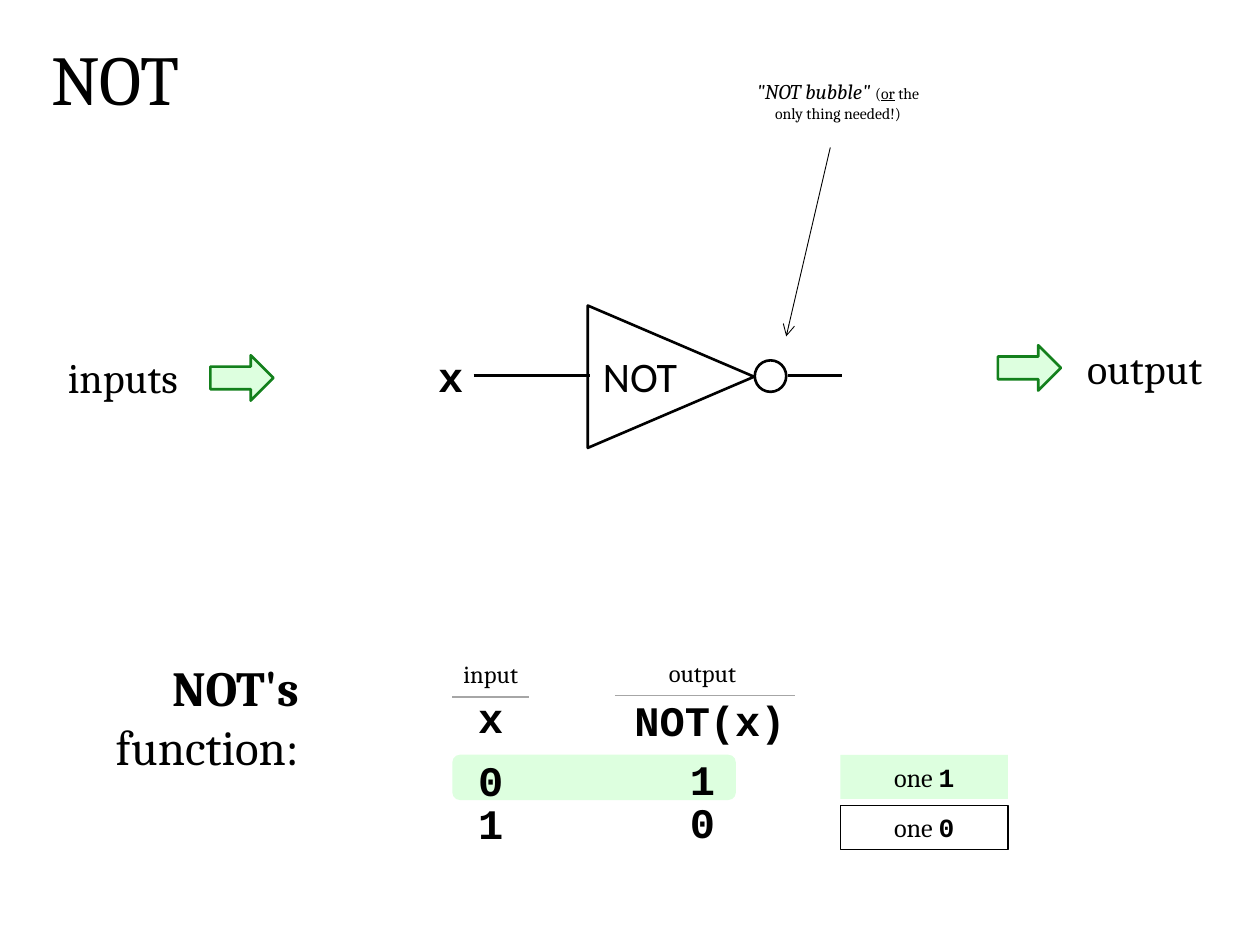
from lxml.etree import SubElement
from pptx import Presentation
from pptx.dml.color import RGBColor
from pptx.enum.shapes import MSO_CONNECTOR, MSO_SHAPE
from pptx.enum.text import MSO_ANCHOR, PP_ALIGN
from pptx.oxml.ns import qn
from pptx.util import Inches, Pt

COLORS = {"ink": "000000", "mint": "DDFFDF", "green": "13801C", "gray": "A6A6A6"}
SERIF, SANS, MONO = "Cambria", "Calibri", "Courier New"
LEFT, MID, RIGHT = PP_ALIGN.LEFT, PP_ALIGN.CENTER, PP_ALIGN.RIGHT


def color(name):
    return RGBColor.from_string(COLORS[name])


def write(frame, runs, align):
    par = frame.paragraphs[0]
    par.alignment = align
    for text, size, face, *marks in runs:
        run = par.add_run()
        run.text = text
        font = run.font
        font.size, font.name = Pt(size), face
        font.color.rgb = color("ink")
        font.bold = "b" in marks
        font.italic = "i" in marks
        font.underline = "u" in marks


def add_text(slide, box, runs, align=MID, wrap=True):
    frame = slide.shapes.add_textbox(*map(Inches, box)).text_frame
    frame.word_wrap = wrap
    write(frame, runs, align)


def add_shape(slide, kind, box, fill=None, line=None, width=1.5):
    shape = slide.shapes.add_shape(kind, *map(Inches, box))
    shape.shadow.inherit = False
    if fill:
        shape.fill.solid()
        shape.fill.fore_color.rgb = color(fill)
    else:
        shape.fill.background()
    if line:
        shape.line.color.rgb = color(line)
        shape.line.width = Pt(width)
    else:
        shape.line.fill.background()
    return shape


def add_line(slide, start, end, tint="ink", width=1.5, arrow=False):
    line = slide.shapes.add_connector(
        MSO_CONNECTOR.STRAIGHT, *map(Inches, (*start, *end)))
    line.line.color.rgb = color(tint)
    line.line.width = Pt(width)
    if arrow:
        SubElement(line.line._get_or_add_ln(), qn("a:tailEnd"), type="arrow")
    SubElement(line._element.spPr, qn("a:effectLst"))


def add_gate(slide):
    for x, y in ((1.67, 2.82), (7.92, 2.74)):
        add_shape(slide, MSO_SHAPE.RIGHT_ARROW, (x, y, 0.5, 0.36), "mint", "green")
    for left, right in ((6.25, 6.68), (3.76, 4.68)):
        add_line(slide, (left, 2.98), (right, 2.98))
    add_text(slide, (4.68, 2.73, 0.8, 0.5), [("NOT", 24, SANS)], wrap=False)
    add_text(slide, (3.38, 2.73, 0.63, 0.5), [("x", 24, MONO, "b")], LEFT)
    gate = add_shape(slide, MSO_SHAPE.ISOSCELES_TRIANGLE,
                     (4.76, 2.33, 1.13, 1.32), line="ink")
    gate.rotation = 90
    add_shape(slide, MSO_SHAPE.OVAL, (5.99, 2.86, 0.25, 0.25), line="ink")
    add_line(slide, (6.59, 1.17), (6.24, 2.67), width=0.5, arrow=True)


def add_truth(slide):
    add_shape(slide, MSO_SHAPE.ROUNDED_RECTANGLE, (3.59, 5.99, 2.25, 0.36), "mint")
    cells = (
        ("x", 3.6, 5.44, 0.59), ("0", 3.6, 5.94, 0.59), ("1", 3.6, 6.28, 0.59),
        ("NOT(x)", 4.72, 5.46, 1.83), ("1", 5.26, 5.93, 0.63), ("0", 5.26, 6.27, 0.63),
    )
    for text, x, y, width in cells:
        add_text(slide, (x, y, width, 0.5), [(text, 24, MONO, "b")])
    heads = (("input", 3.57, 5.18, 0.65, 3.59, 4.2),
             ("output", 5.18, 5.17, 0.79, 4.88, 6.31))
    for text, x, y, width, left, right in heads:
        add_text(slide, (x, y, width, 0.33), [(text, 14, SERIF)], wrap=False)
        add_line(slide, (left, y + 0.35), (right, y + 0.35), "gray", 1)


def add_count(slide, digit, top, fill=None, line=None):
    shape = add_shape(slide, MSO_SHAPE.RECTANGLE, (6.67, top, 1.33, 0.35), fill, line, 0.75)
    frame = shape.text_frame
    frame.word_wrap = True
    frame.vertical_anchor = MSO_ANCHOR.MIDDLE
    write(frame, [("one ", 15, SERIF), (digit, 15, MONO, "b")], MID)


def main():
    """Build the NOT gate slide with its truth table."""
    deck = Presentation()
    deck.slide_width, deck.slide_height = Inches(10), Inches(7.5)
    slide = deck.slides.add_slide(deck.slide_layouts[6])
    add_text(slide, (0.31, 0.23, 7.92, 0.77), [("NOT", 40, SERIF)], LEFT)
    add_text(slide, (0.42, 2.74, 1.11, 0.51), [("inputs", 24, SERIF)], wrap=False)
    add_text(slide, (8.5, 2.67, 1.17, 0.51), [("output", 24, SERIF)], wrap=False)
    add_text(slide, (5.9, 0.57, 1.5, 0.45), [
        ('"NOT bubble" ', 12, SERIF, "i"), ("(", 9, SERIF),
        ("or", 9, SERIF, "u"), (" the only thing needed!)", 9, SERIF)])
    add_gate(slide)
    add_truth(slide)
    add_count(slide, "1", 5.99, fill="mint")
    add_count(slide, "0", 6.39, line="ink")
    add_text(slide, (0.33, 5.17, 2.14, 1.04),
             [("NOT's ", 28, SERIF, "b"), ("function:", 28, SERIF)], RIGHT)
    deck.save("out.pptx")


if __name__ == "__main__":
    main()
